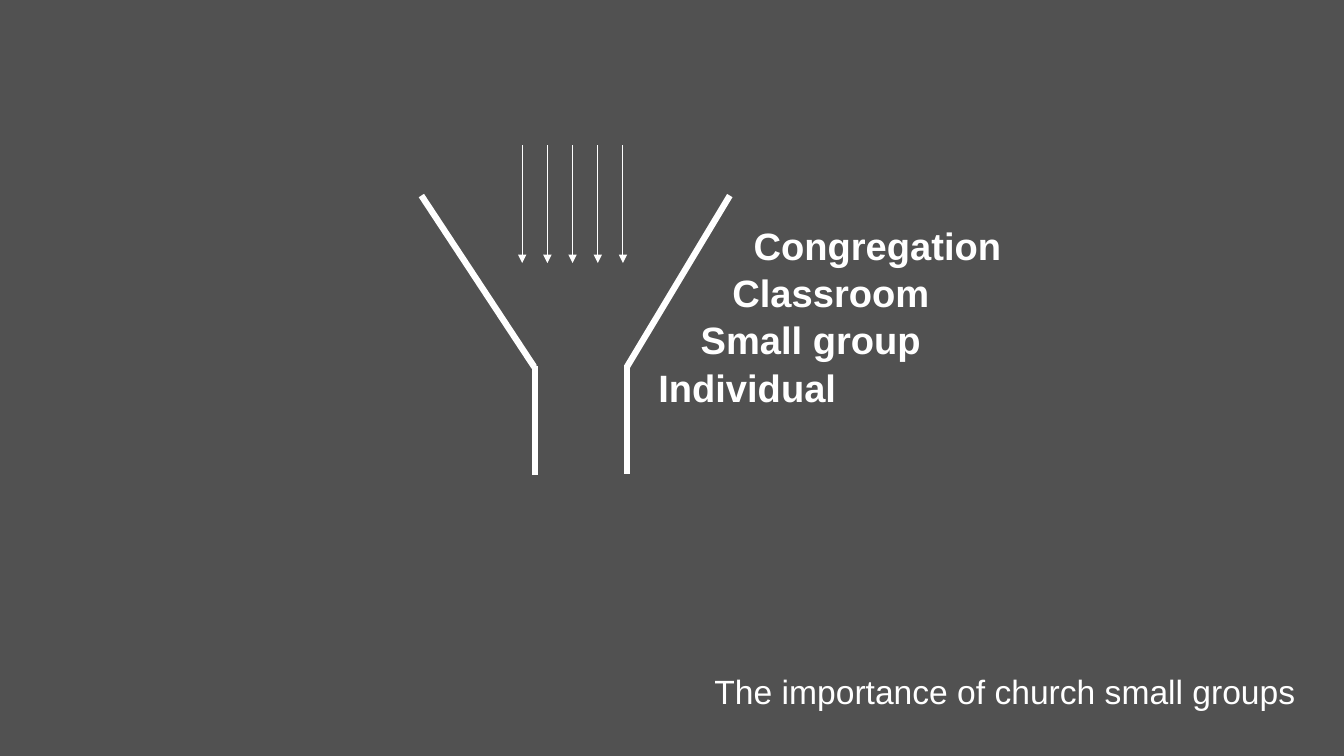
"""Build a slide with a funnel that narrows from congregation to individual."""
from dataclasses import dataclass

from lxml.etree import SubElement
from pptx import Presentation
from pptx.dml.color import RGBColor
from pptx.enum.shapes import MSO_CONNECTOR
from pptx.enum.text import MSO_ANCHOR, MSO_AUTO_SIZE, PP_ALIGN
from pptx.oxml.ns import qn
from pptx.shapes.placeholder import SlidePlaceholder
from pptx.slide import Slide
from pptx.text.text import TextFrame
from pptx.util import Pt


@dataclass(frozen=True)
class Theme:
    back: RGBColor = RGBColor(0x51, 0x51, 0x51)
    ink: RGBColor = RGBColor(0xFF, 0xFF, 0xFF)
    font: str = "Arial"
    list_size: float = 27.2
    title_size: float = 24
    wall: float = 4.5
    arrow: float = 0.75


@dataclass(frozen=True)
class Box:
    left: float
    top: float
    width: float
    height: float
    inset: float


@dataclass(frozen=True)
class Line:
    x1: float
    y1: float
    x2: float
    y2: float
    weight: float
    arrow: bool = False


@dataclass(frozen=True)
class Level:
    text: str
    steps: int


THEME = Theme()
STEP = 7.56
LIST_BOX = Box(463, 160.56, 445, 130.3, 7)
TITLE_BOX = Box(212.4, 477.36, 720, 51.1, 5)
LEVELS = [
    Level("Congregation", 9),
    Level("Classroom", 7),
    Level("Small group", 4),
    Level("Individual", 0),
]
WALLS = [
    Line(301, 139.7, 381.6, 262.1, THEME.wall),
    Line(447.8, 262.1, 521.3, 139.7, THEME.wall),
    Line(382.3, 261.4, 382.3, 339.1, THEME.wall),
    Line(447.8, 260.6, 447.8, 338.4, THEME.wall),
]
ARROWS = [
    Line(x, 103.7, x, 187.9, THEME.arrow, True)
    for x in (373 + 18 * i for i in range(5))
]


def place(holder: SlidePlaceholder, box: Box) -> TextFrame:
    holder.left, holder.top = Pt(box.left), Pt(box.top)
    holder.width, holder.height = Pt(box.width), Pt(box.height)
    frame = holder.text_frame
    frame.word_wrap = True
    frame.auto_size = MSO_AUTO_SIZE.NONE
    frame.vertical_anchor = MSO_ANCHOR.TOP
    frame.margin_top = Pt(box.inset)
    return frame


def write(para, text: str, size: float, bold: bool) -> None:
    run = para.add_run()
    run.text = text
    run.font.name = THEME.font
    run.font.size = Pt(size)
    run.font.bold = bold
    run.font.color.rgb = THEME.ink


def draw_title(slide: Slide) -> None:
    para = place(slide.shapes.title, TITLE_BOX).paragraphs[0]
    para.alignment = PP_ALIGN.RIGHT
    para.line_spacing = 0.9
    para.space_before = Pt(0)
    write(para, "The importance of church small groups", THEME.title_size, False)


def draw_list(slide: Slide) -> None:
    frame = place(slide.placeholders[1], LIST_BOX)
    for i, level in enumerate(LEVELS):
        para = frame.add_paragraph() if i else frame.paragraphs[0]
        props = para._p.get_or_add_pPr()
        props.set("marL", str(Pt(level.steps * STEP)))
        props.set("indent", "0")
        SubElement(props, qn("a:buNone"))
        para.alignment = PP_ALIGN.LEFT
        para.line_spacing = 0.7
        para.space_before = Pt(11 if i else 0)
        write(para, level.text, THEME.list_size, True)


def draw_line(slide: Slide, line: Line) -> None:
    shape = slide.shapes.add_connector(
        MSO_CONNECTOR.STRAIGHT, Pt(line.x1), Pt(line.y1), Pt(line.x2), Pt(line.y2)
    )
    shape.line.color.rgb = THEME.ink
    shape.line.width = Pt(line.weight)
    if line.arrow:
        SubElement(shape.line._get_or_add_ln(), qn("a:tailEnd"), type="triangle")
    SubElement(shape._element.spPr, qn("a:effectLst"))


def main() -> None:
    deck = Presentation()
    deck.slide_width, deck.slide_height = Pt(960), Pt(540)
    slide = deck.slides.add_slide(deck.slide_layouts[1])
    slide.background.fill.solid()
    slide.background.fill.fore_color.rgb = THEME.back
    draw_list(slide)
    draw_title(slide)
    for line in WALLS + ARROWS:
        draw_line(slide, line)
    deck.save("out.pptx")


if __name__ == "__main__":
    main()
